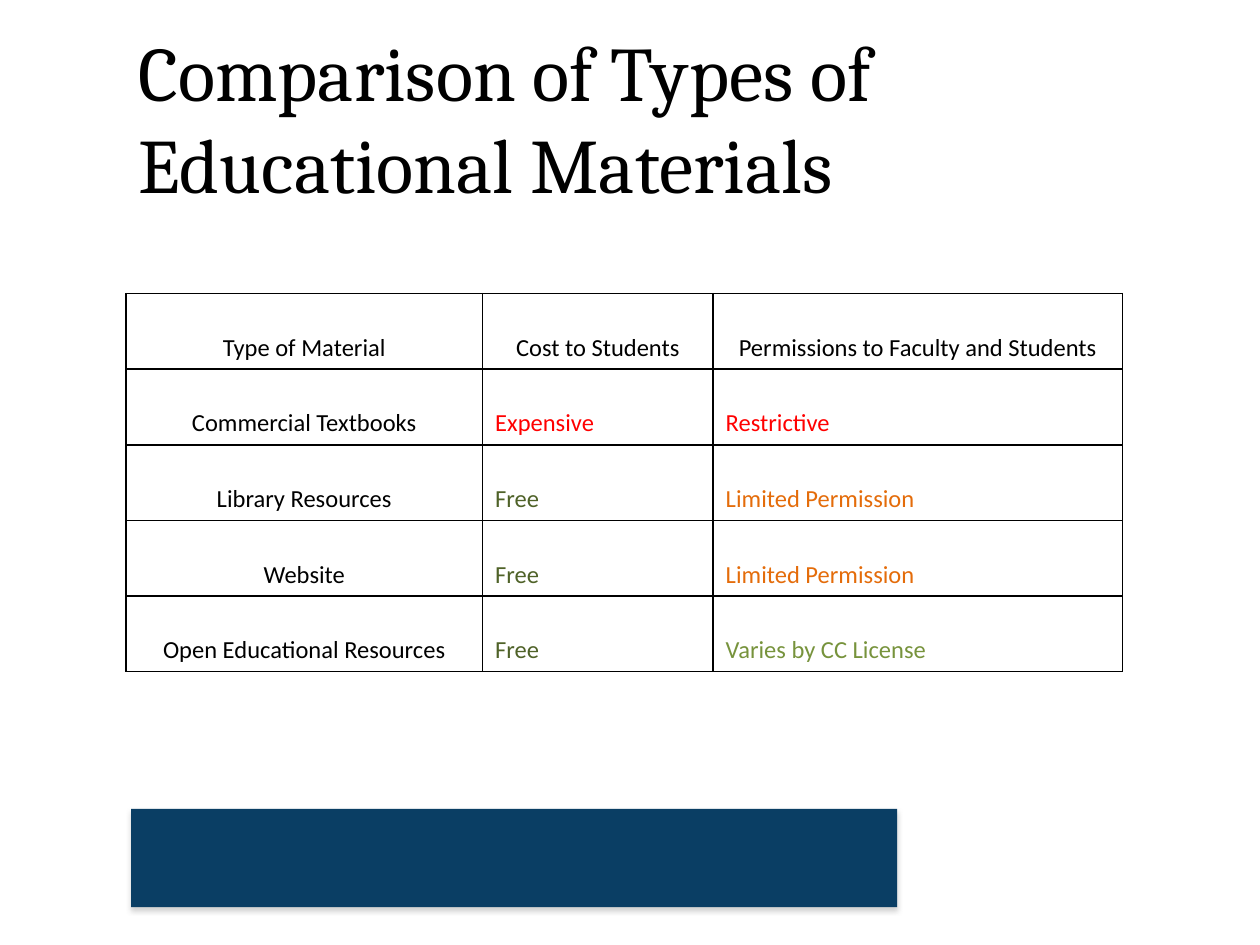
import pptx
import pptx.util
import pptx.dml.color
import pptx.oxml
import pptx.oxml.ns
import pptx.enum.shapes
import pptx.enum.text

Inches, Pt = pptx.util.Inches, pptx.util.Pt
ALIGN = pptx.enum.text.PP_ALIGN
ANCHOR = pptx.enum.text.MSO_ANCHOR

# Content
TITLE = "Comparison of Types of Educational Materials"
BLACK, RED, GREEN, ORANGE, LIME = "000000", "FF0000", "4F6228", "E46C0A", "77933C"
NAVY, GREY = "0A3E64", "808080"
HEADER = ("Type of Material", "Cost to Students", "Permissions to Faculty and Students")
MATERIALS = [
    ("Commercial Textbooks", ("Expensive", RED), ("Restrictive", RED)),
    ("Library Resources", ("Free", GREEN), ("Limited Permission", ORANGE)),
    ("Website", ("Free", GREEN), ("Limited Permission", ORANGE)),
    ("Open Educational Resources", ("Free", GREEN), ("Varies by CC License", LIME)),
]

# Layout in inches
LEFT = 1
COLUMNS = (2.83, 1.83, 3.25)
ROW_HEIGHT = 0.6
TABLE_TOP = 2.33


def color(hex_code):
    return pptx.dml.color.RGBColor.from_string(hex_code)


def write(frame, text, font="Calibri", size=14, fill=BLACK, align=ALIGN.LEFT):
    para = frame.paragraphs[0]
    para.alignment = align
    span = para.add_run()
    span.text = text
    span.font.name = font
    span.font.size = Pt(size)
    span.font.color.rgb = color(fill)


def add_xml(parent, xml):
    namespace = pptx.oxml.ns.nsdecls("a")
    parent.append(pptx.oxml.parse_xml(xml.replace(" ", f" {namespace} ", 1)))


def outline(cell):
    for side in ("lnL", "lnR", "lnT", "lnB"):
        add_xml(cell._tc.get_or_add_tcPr(),
                f'<a:{side} w="{Pt(1)}"><a:solidFill><a:srgbClr val="{BLACK}"/>'
                f'</a:solidFill></a:{side}>')


deck = pptx.Presentation()
deck.slide_width, deck.slide_height = Inches(10), Inches(7.5)
page = deck.slides.add_slide(deck.slide_layouts[6])

# Footer bar with a soft shadow
bar = page.shapes.add_shape(pptx.enum.shapes.MSO_SHAPE.RECTANGLE,
                            Inches(1.04), Inches(6.42), Inches(6.08), Inches(0.78))
bar.fill.solid()
bar.fill.fore_color.rgb = color(NAVY)
bar.line.fill.background()
bar.shadow.inherit = False
add_xml(bar._element.spPr.find(pptx.oxml.ns.qn("a:effectLst")),
        f'<a:outerShdw blurRad="{Pt(3.1)}" dist="{Pt(1.8)}" dir="5400000" rotWithShape="0">'
        f'<a:srgbClr val="{GREY}"><a:alpha val="35000"/></a:srgbClr></a:outerShdw>')

# Title
box = page.shapes.add_textbox(Inches(LEFT), Inches(0.3), Inches(8.5), Inches(1.25))
box.text_frame.word_wrap = True
box.text_frame.vertical_anchor = ANCHOR.MIDDLE
write(box.text_frame, TITLE, font="Cambria", size=44)

# Comparison table: header and first column are centred and black
rows = [[(text, BLACK) for text in HEADER]]
rows += [[(name, BLACK), cost, permission] for name, cost, permission in MATERIALS]
table = page.shapes.add_table(len(rows), len(COLUMNS), Inches(LEFT), Inches(TABLE_TOP),
                              Inches(sum(COLUMNS)), Inches(ROW_HEIGHT * len(rows))).table
table.first_row = table.horz_banding = False
for column, width in zip(table.columns, COLUMNS):
    column.width = Inches(width)
for r, row in enumerate(rows):
    table.rows[r].height = Inches(ROW_HEIGHT)
    for c, (text, fill) in enumerate(row):
        cell = table.cell(r, c)
        cell.vertical_anchor = ANCHOR.BOTTOM
        outline(cell)
        cell.fill.background()
        centred = r == 0 or c == 0
        write(cell.text_frame, text, fill=fill,
              align=ALIGN.CENTER if centred else ALIGN.LEFT)

deck.save("out.pptx")
